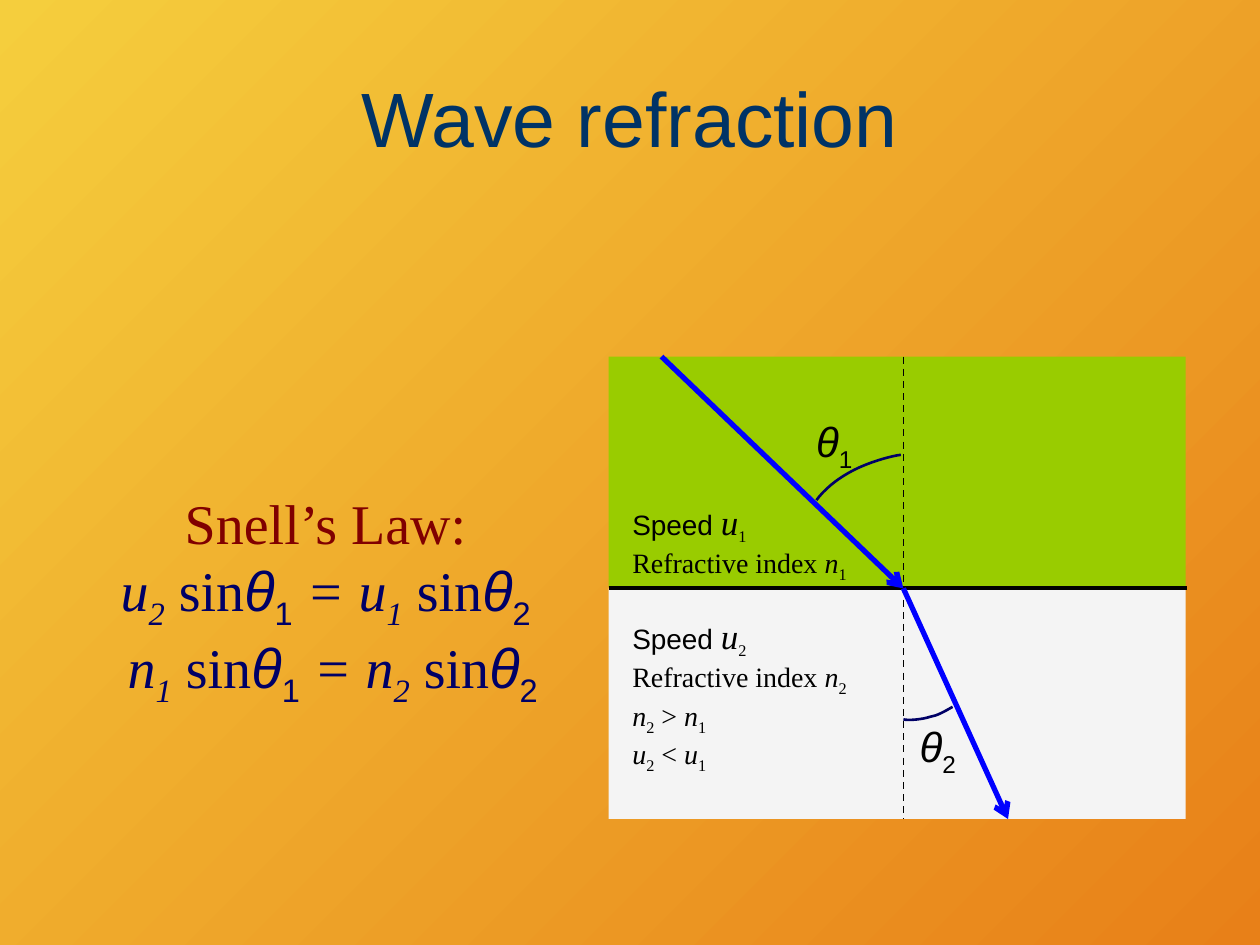
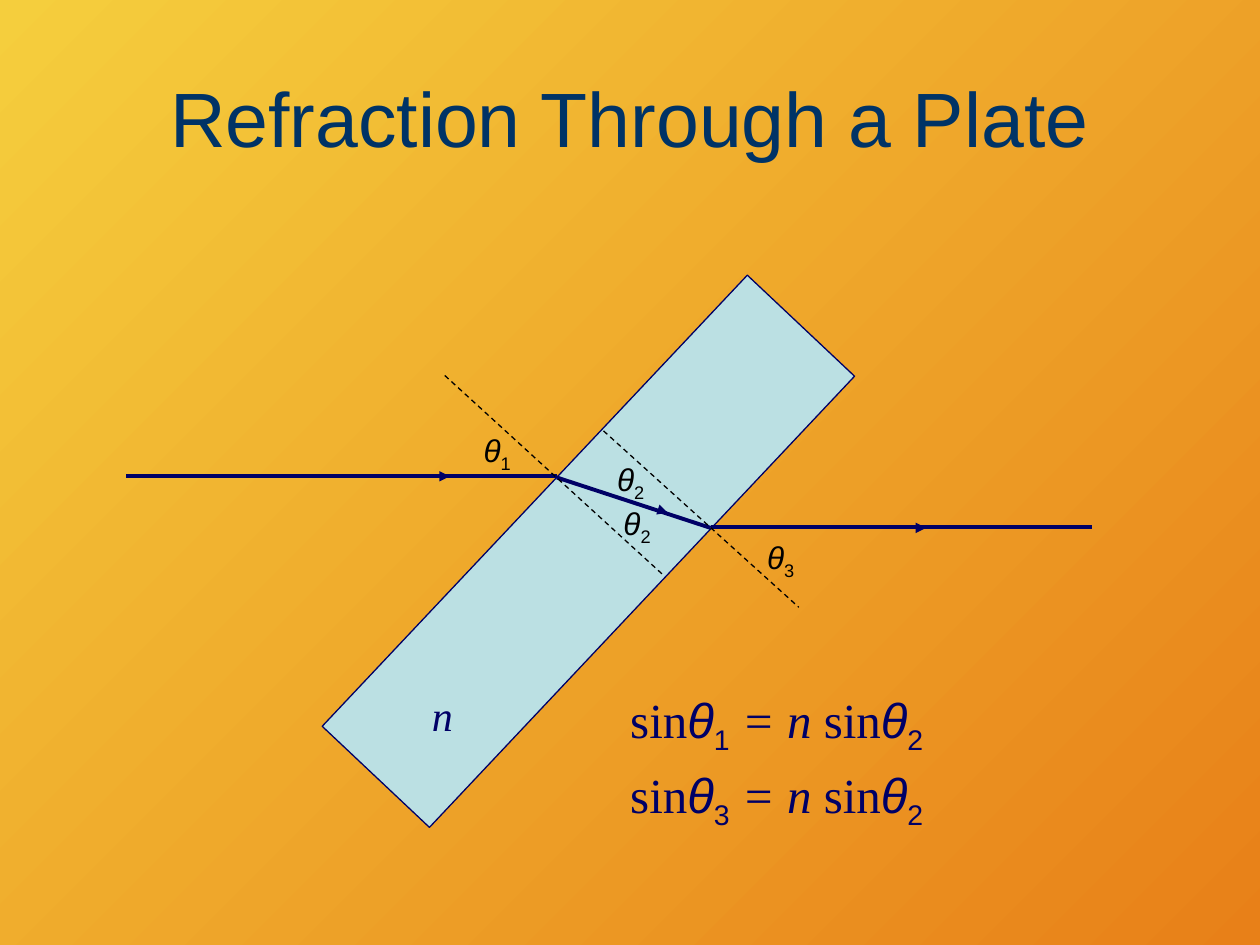
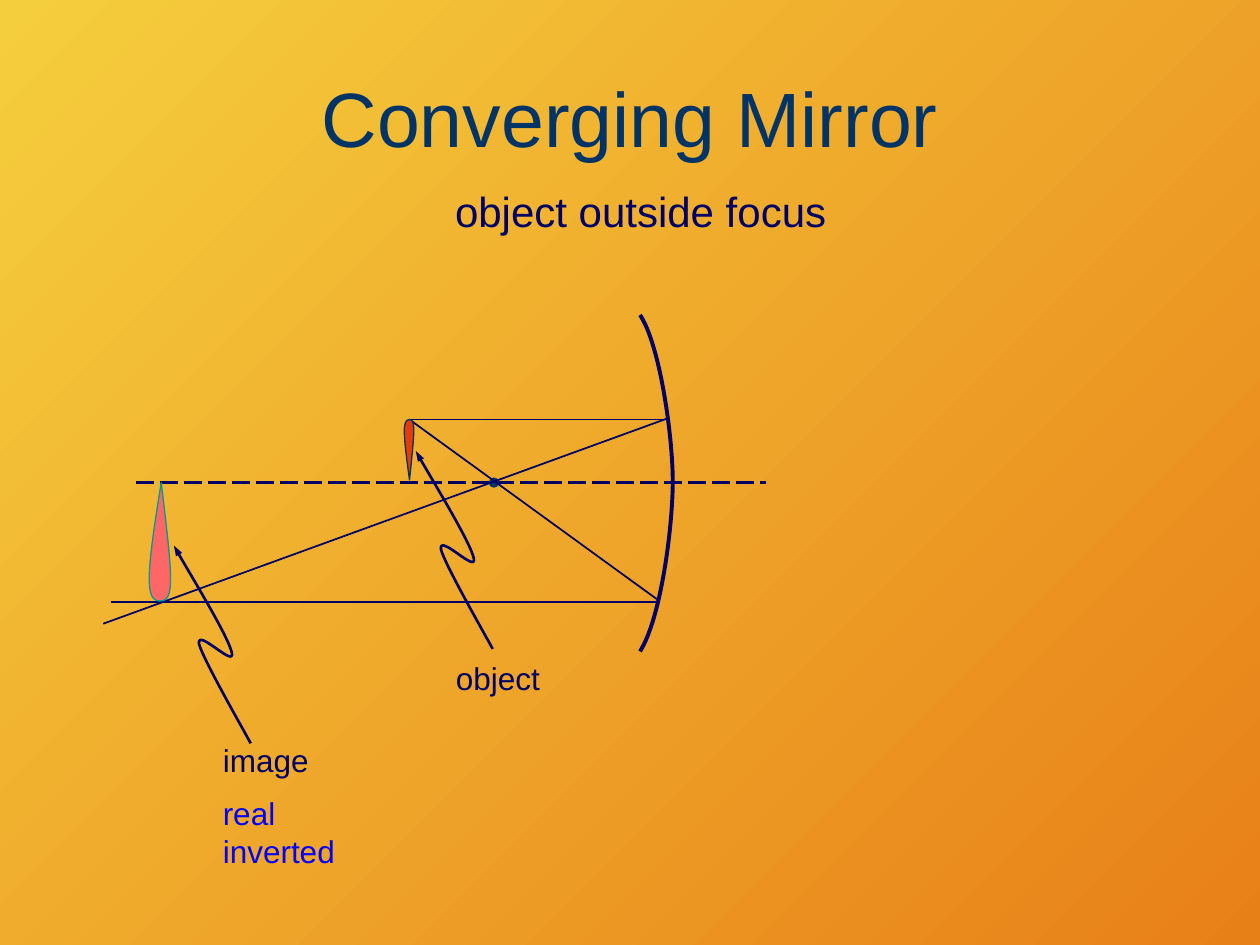
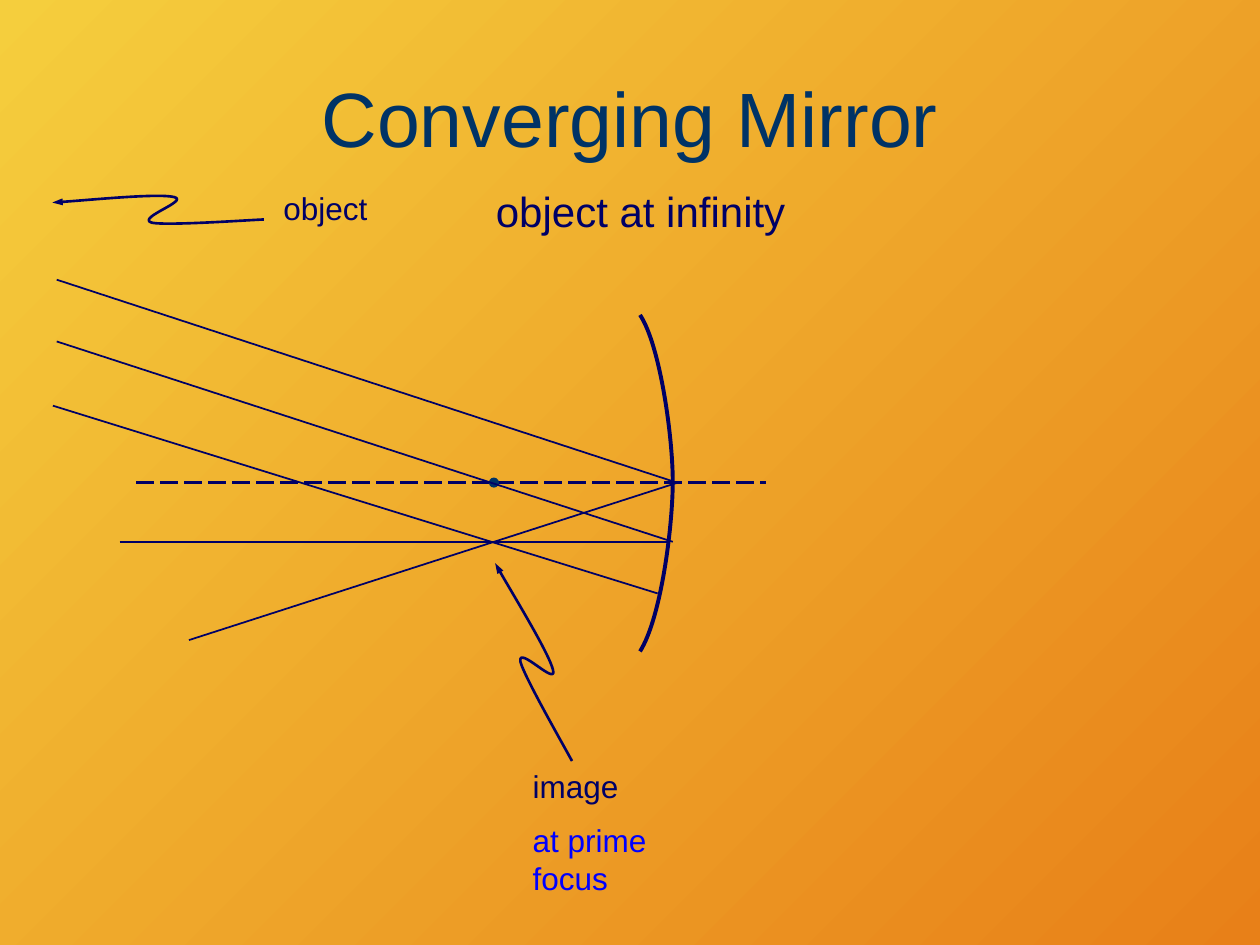
from lxml.etree import SubElement
from pptx import Presentation
from pptx.dml.color import RGBColor
from pptx.enum.dml import MSO_LINE
from pptx.enum.shapes import MSO_CONNECTOR, MSO_SHAPE
from pptx.enum.text import MSO_ANCHOR, MSO_AUTO_SIZE, PP_ALIGN
from pptx.oxml.ns import qn
from pptx.util import Inches, Pt

NAVY, TITLE, BLACK, BLUE = "000066", "003366", "000000", "0000FF"
SANS, SERIF = "Arial", "Times New Roman"
DASH, LONG = MSO_LINE.DASH, MSO_LINE.LONG_DASH
WAVE = [(0.61, 1.57), (0.54, 1.44), (0.23, 0.9), (0.2, 0.78), (0.18, 0.65),
        (0.49, 0.98), (0.46, 0.85), (0.43, 0.72), (0.1, 0.18), (0, 0)]
MIRROR = [(5.08, 2.5), (5.24, 2.74), (5.34, 3.47), (5.34, 3.82),
          (5.34, 4.17), (5.25, 4.9), (5.08, 5.17)]


def hue(code):
    return RGBColor.from_string(code)


def theta(num):
    return f"|^*θ|^_{num}"


def smooth(item):
    legs = list(item._element.iter(qn("a:lnTo")))
    for i in range(0, len(legs), 3):
        trio = legs[i:i + 3]
        track = trio[0].getparent()
        bend = SubElement(track, qn("a:cubicBezTo"))
        track.replace(trio[0], bend)
        for leg in trio:
            bend.append(leg[0])
        for leg in trio[1:]:
            track.remove(leg)


class Deck:
    def __init__(self):
        self.prs = Presentation()
        self.prs.slide_width, self.prs.slide_height = Inches(10), Inches(7.5)
        fill = self.prs.slide_master.background.fill
        fill.gradient()
        fill.gradient_angle = 315
        for stop, code in zip(fill.gradient_stops, ("F5CE3D", "E88018")):
            stop.color.rgb = hue(code)

    def page(self, title):
        self.shapes = self.prs.slides.add_slide(self.prs.slide_layouts[6]).shapes
        self.text((0.5, 0.3, 9, 1.25), title, size=44, color=TITLE, center=True,
                  anchor=MSO_ANCHOR.MIDDLE, grow=False)

    def text(self, at, text, size=18, font=SANS, color=NAVY, center=False, gap=0,
             anchor=MSO_ANCHOR.TOP, grow=True, wrap=True, tints=()):
        frame = self.shapes.add_textbox(*map(Inches, at)).text_frame
        frame.word_wrap, frame.vertical_anchor = wrap, anchor
        frame.auto_size = MSO_AUTO_SIZE.SHAPE_TO_FIT_TEXT if grow else MSO_AUTO_SIZE.NONE
        for row, line in enumerate(text.split("\n")):
            para = frame.add_paragraph() if row else frame.paragraphs[0]
            para.alignment = PP_ALIGN.CENTER if center else PP_ALIGN.LEFT
            para.space_before = Pt(gap if row else 0)
            for piece in filter(None, line.split("|")):
                body = piece.lstrip("*_^+")
                flags = piece[:len(piece) - len(body)]
                run = para.add_run()
                run.text = body
                run.font.name = SANS if "^" in flags else font
                run.font.size = Pt(20 if "+" in flags else size)
                run.font.italic = "*" in flags
                run.font.color.rgb = hue(tints[row] if tints else color)
                if "_" in flags:
                    run._r.get_or_add_rPr().set("baseline", "-25000")

    def stroke(self, item, color, width, dash=None, head=None, span="med"):
        item.line.color.rgb = hue(color)
        item.line.width = Pt(width)
        if dash:
            item.line.dash_style = dash
        if head:
            SubElement(item.line._get_or_add_ln(), qn("a:tailEnd"), type=head, w=span)

    def paint(self, item, fill=None, color=None, width=1, head=None):
        item.shadow.inherit = False
        if fill:
            item.fill.solid()
            item.fill.fore_color.rgb = hue(fill)
        else:
            item.fill.background()
        if color:
            self.stroke(item, color, width, head=head, span="sm")
        else:
            item.line.fill.background()

    def line(self, start, end, color=NAVY, width=1, dash=None, head=None):
        ends = map(Inches, (*start, *end))
        item = self.shapes.add_connector(MSO_CONNECTOR.STRAIGHT, *ends)
        self.stroke(item, color, width, dash, head)
        SubElement(item._element.spPr, qn("a:effectLst"))

    def shape(self, kind, at, turn=0, **look):
        item = self.shapes.add_shape(kind, *map(Inches, at))
        item.rotation = turn
        self.paint(item, **look)

    def curve(self, pts, close=False, turn=0, **look):
        dots = [(Inches(x), Inches(y)) for x, y in pts]
        pen = self.shapes.build_freeform(*dots[0])
        pen.add_line_segments(dots[1:], close=close)
        item = pen.convert_to_shape()
        smooth(item)
        item.rotation = turn
        self.paint(item, **look)

    def wave(self, left, top, turn=0):
        self.curve([(left + x, top + y) for x, y in WAVE], turn=turn,
                   color=NAVY, width=1.5, head="triangle")

    def angle(self, at, num, size=18, wrap=False):
        self.text(at, theta(num), size=size, color=BLACK, wrap=wrap)

    def mirror(self, note, rays):
        self.page("Converging Mirror")
        self.curve(MIRROR, color=NAVY, width=2.25)
        self.line((1.08, 3.83), (6.08, 3.83), width=1.25, dash=LONG)
        self.shape(MSO_SHAPE.OVAL, (3.88, 3.79, 0.08, 0.08), fill=TITLE)
        for start, end in rays:
            self.line(start, end)
        self.text((3.17, 1.42, 3.83, 0.5), note, size=24, center=True)

    def result(self, left, top, note):
        self.text((left, top, 1.17, 1.15), "image\n" + note, gap=9, tints=(NAVY, BLUE))


def bend(deck):
    deck.page("Wave refraction")
    laws = [f"{lead}|*_{a}| sin{theta(1)}|* = {sign}|*_{b}| sin{theta(2)}"
            for lead, sign, a, b in (("*u", "u", 2, 1), ("* n", "n", 1, 2))]
    deck.text((0.75, 3.83, 3.67, 2.23), "\n".join(["Snell’s Law:", *laws]), size=32,
              font=SERIF, center=True, tints=("800000", NAVY, NAVY))
    for top, fill in ((2.83, "99CC00"), (4.67, "F4F4F4")):
        deck.shape(MSO_SHAPE.RECTANGLE, (4.83, top, 4.58, 1.83), fill=fill)
    hit = (7.17, 4.67)
    deck.line((4.83, 4.67), (9.42, 4.67), BLACK, 2.25)
    deck.line((7.17, 2.83), (7.17, 6.5), BLACK, 1, DASH)
    deck.line((5.25, 2.83), hit, BLUE, 3, head="arrow")
    deck.line(hit, (8, 6.5), BLUE, 3, head="arrow")
    facts = "^Speed |*+u|_{0}\nRefractive index |*n|_{0}"
    more = "\n*n|_2| > |*n|_1\n*u|_2| < |*u|_1"
    for at, text in (((4.92, 3.92, 2, 0.7), facts.format(1)),
                     ((4.92, 4.83, 2.08, 1.24), facts.format(2) + more)):
        deck.text(at, text, size=16, font=SERIF, color=BLACK)
    deck.angle((6.38, 3.25, 0.5, 0.5), 1, 24, True)
    deck.angle((7.2, 5.67, 0.52, 0.5), 2, 24, True)
    for arc in ([(6.48, 3.97), (6.54, 3.89), (6.63, 3.81), (6.76, 3.74),
                 (6.89, 3.67), (7.07, 3.62), (7.15, 3.61)],
                [(7.56, 5.61), (7.49, 5.65), (7.44, 5.68), (7.38, 5.69),
                 (7.32, 5.71), (7.21, 5.72), (7.17, 5.71)]):
        deck.curve(arc, color=NAVY, width=1.5)


def plate(deck):
    deck.page("Refraction Through a Plate")
    deck.shape(MSO_SHAPE.RECTANGLE, (2.21, 3.79, 4.92, 1.17), turn=313.3,
               fill="BBE0E3", color=NAVY, width=0.75)
    deck.text((3.33, 5.42, 0.33, 0.5), "*n", size=24, font=SERIF, center=True)
    for start, end, tail, tip in (
            ((4.42, 3.79), (5.64, 4.19), (4.9, 3.94), (5.3, 4.07)),
            ((1, 3.78), (4.42, 3.78), (2.99, 3.78), (3.57, 3.78)),
            ((5.64, 4.18), (8.67, 4.18), (6.77, 4.19), (7.35, 4.19))):
        deck.line(start, end, width=2.25)
        deck.line(tail, tip, width=0.5, head="triangle")
    for start, end in (((3.53, 2.98), (5.26, 4.56)), ((4.79, 3.42), (6.34, 4.82))):
        deck.line(start, end, BLACK, 0.75, DASH)
    for left, top, num in ((3.74, 3.37, 1), (4.85, 3.95, 2), (4.8, 3.6, 2), (5.99, 4.22, 3)):
        deck.angle((left, top, 0.44, 0.4), num)
    for top, num in ((5.42, 1), (6.02, 3)):
        deck.text((4.83, top, 2.67, 0.57), f"sin{theta(num)}|* = n |sin{theta(2)}",
                  size=28, font=SERIF, center=True)


def near(deck):
    deck.mirror("object outside focus", (
        ((3.25, 3.33), (5.3, 3.33)), ((5.3, 3.32), (0.82, 4.95)),
        ((3.25, 3.33), (5.22, 4.76)), ((0.88, 4.78), (5.22, 4.78))))
    deck.curve([(3.25, 3.81), (3.29, 3.43), (3.3, 3.33), (3.25, 3.33),
                (3.19, 3.33), (3.2, 3.44), (3.25, 3.81)],
               close=True, fill="E53C05", color=TITLE, width=0.75)
    deck.text((3.52, 5.18, 0.98, 0.4), "object")
    deck.wave(3.3, 3.58)
    deck.curve([(1.28, 3.83), (1.37, 4.58), (1.39, 4.77), (1.27, 4.77),
                (1.15, 4.77), (1.16, 4.57), (1.28, 3.83)],
               close=True, fill="FF6666", color="009999", width=0.75)
    deck.result(1.67, 5.83, "real inverted")
    deck.wave(1.38, 4.33)


def far(deck):
    deck.mirror("object at infinity", (
        ((1.5, 5.08), (5.38, 3.83)), ((0.45, 2.71), (5.34, 4.3)),
        ((0.95, 4.3), (5.3, 4.3)), ((0.42, 3.22), (5.22, 4.71)),
        ((0.45, 2.22), (5.34, 3.82))))
    deck.text((2.15, 1.45, 0.98, 0.4), "object")
    deck.wave(0.95, 0.89, turn=295.8)
    deck.result(4.13, 6.04, "at prime focus")
    deck.wave(3.93, 4.47)


def main():
    deck = Deck()
    for draw in (bend, plate, near, far):
        draw(deck)
    deck.prs.save("out.pptx")


if __name__ == "__main__":
    main()
